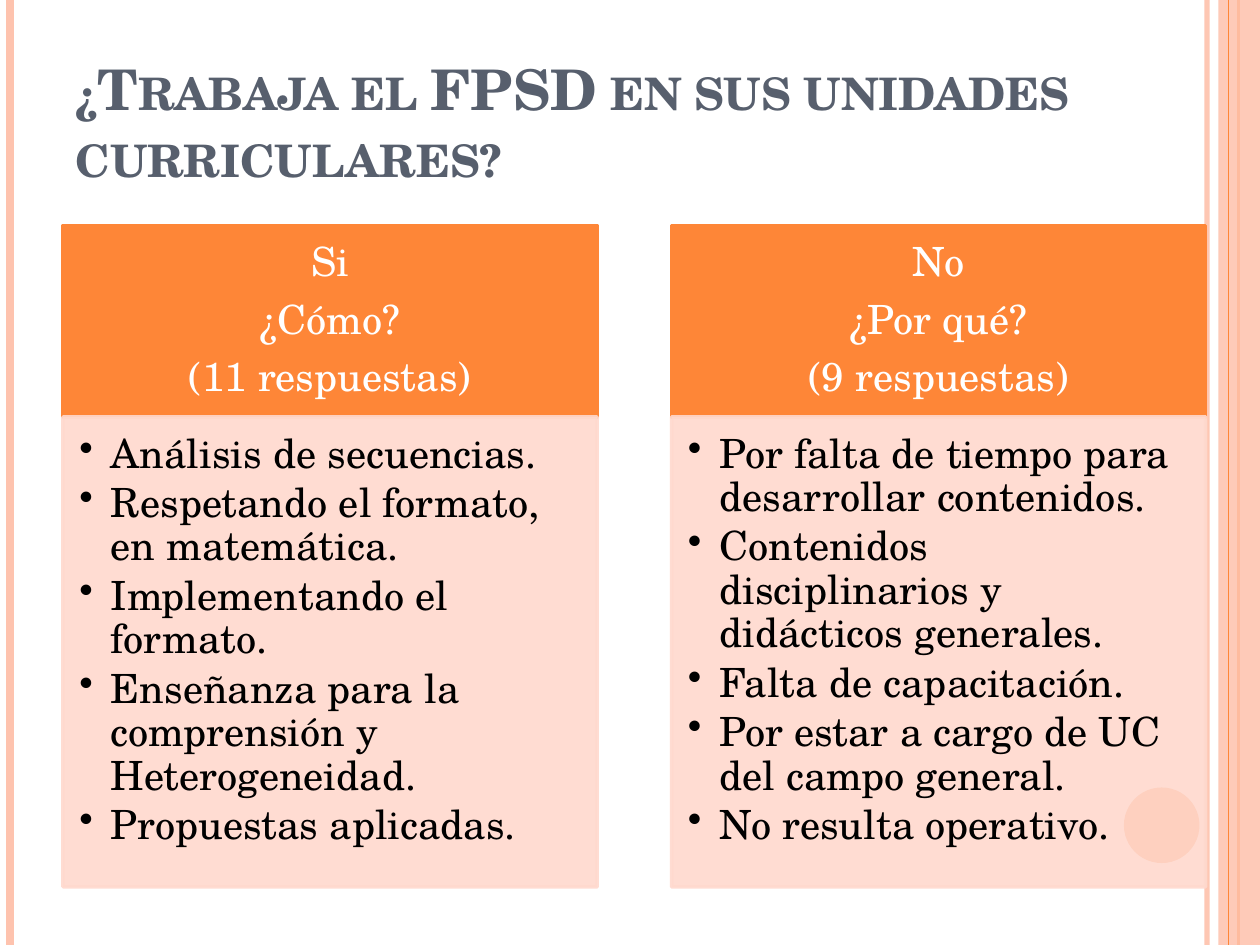
from dataclasses import dataclass

from lxml import etree
from pptx import Presentation
from pptx import util as u
from pptx.dml.color import RGBColor
from pptx.enum import shapes, text
from pptx.oxml.ns import qn


@dataclass(frozen=True)
class Theme:
    """Hold the colours, font and type sizes."""
    orange: str = "FE8637"
    peach: str = "FEC3AE"
    pale: str = "FFD9CE"
    slate: str = "575F6D"
    white: str = "FFFFFF"
    black: str = "000000"
    font: str = "TeX Gyre Schola"
    head: int = 32
    body: int = 23


THEME = Theme()
TITLE = "¿Trabaja el FPSD en sus unidades curriculares?"
COLUMNS = [
    (["Si", "¿Cómo?", "(11 respuestas)"],
     ["Análisis de secuencias.",
      "Respetando el formato, en matemática.",
      "Implementando el formato.",
      "Enseñanza para la comprensión y Heterogeneidad.",
      "Propuestas aplicadas."]),
    (["No", "¿Por qué?", "(9 respuestas)"],
     ["Por falta de tiempo para desarrollar contenidos.",
      "Contenidos disciplinarios y didácticos generales.",
      "Falta de capacitación.",
      "Por estar a cargo de UC del campo general.",
      "No resulta operativo."]),
]


def assign(item, values):
    """Set each attribute of an item from a dict."""
    for name, value in values.items():
        setattr(item, name, value)


def fade(fill, alpha):
    """Give a solid fill an opacity in percent."""
    tint = fill._xPr.find(qn("a:solidFill"))[0]
    etree.SubElement(tint, qn("a:alpha"), val=str(alpha * 1000))


def block(slide, kind, box, color, alpha=100, edge=0):
    """Draw a filled shape, with an edge of its own colour if asked."""
    item = slide.shapes.add_shape(kind, *map(u.Inches, box))
    item.shadow.inherit = False
    fills = [item.fill]
    if edge:
        item.line.width = u.Pt(edge)
        fills.append(item.line.fill)
    else:
        item.line.fill.background()
    for fill in fills:
        fill.solid()
        fill.fore_color.rgb = RGBColor.from_string(color)
        if alpha < 100:
            fade(fill, alpha)
    return item


def rule(slide, left, top, height, color, width, alpha=100):
    """Draw a vertical line."""
    item = slide.shapes.add_connector(
        shapes.MSO_CONNECTOR.STRAIGHT, u.Inches(left), u.Inches(top),
        u.Inches(left), u.Inches(top + height))
    item.line.width = u.Pt(width)
    item.line.color.rgb = RGBColor.from_string(color)
    if alpha < 100:
        fade(item.line.fill, alpha)
    etree.SubElement(item._element.spPr, qn("a:effectLst"))


def write(item, lines, color, size, insets, anchor, style, bold=False):
    """Fill a shape with styled paragraphs."""
    frame = item.text_frame
    sides = ("margin_left", "margin_top", "margin_right", "margin_bottom")
    assign(frame, dict(zip(sides, map(u.Inches, insets))))
    assign(frame, {"word_wrap": True, "vertical_anchor": anchor})
    for pos, line in enumerate(lines):
        para = frame.add_paragraph() if pos else frame.paragraphs[0]
        assign(para, style)
        run = para.add_run()
        run.text = line
        assign(run.font, {"name": THEME.font, "size": u.Pt(size), "bold": bold})
        run.font.color.rgb = RGBColor.from_string(color)
    return frame.paragraphs


def frame_page(slide, box):
    """Draw the edge rules, the side band and the disc."""
    left, top, wide, high = box
    right = left + wide
    rule(slide, right - 0.42, top, high, THEME.peach, 3, 93)
    rule(slide, left + 0.08, top, high, THEME.peach, 4.5)
    rule(slide, right - 0.17, top, high, THEME.orange, 1.5)
    block(slide, shapes.MSO_SHAPE.RECTANGLE,
          (right - 0.33, top, 0.33, high), THEME.peach, 87)
    rule(slide, right - 0.25, top, high, THEME.orange, 0.75)
    block(slide, shapes.MSO_SHAPE.OVAL,
          (right - 1.08, top + high - 1.25, 0.6, 0.6), THEME.orange)


def title(slide, box):
    """Place the heading in small capitals."""
    item = slide.shapes.add_textbox(*map(u.Inches, box))
    paras = write(item, [TITLE], THEME.slate, THEME.head,
                  (0.1, 0.05, 0.1, 0.05), text.MSO_ANCHOR.BOTTOM,
                  {"alignment": text.PP_ALIGN.LEFT}, True)
    paras[0].runs[0]._r.get_or_add_rPr().set("cap", "small")


def column(slide, box, heads, points):
    """Stack a header block on a panel of bullets."""
    left, top, wide, high = box
    cap = 1.52
    kind = shapes.MSO_SHAPE.RECTANGLE
    header = block(slide, kind, (left, top, wide, cap), THEME.orange, edge=2)
    write(header, heads, THEME.white, THEME.body, (0.18, 0.1, 0.18, 0.1),
          text.MSO_ANCHOR.MIDDLE,
          {"alignment": text.PP_ALIGN.CENTER, "line_spacing": 0.9,
           "space_after": u.Pt(8)})
    panel = block(slide, kind, (left, top + cap, wide, high - cap),
                  THEME.pale, 90, 2)
    paras = write(panel, points, THEME.black, THEME.body,
                  (0.13, 0.13, 0.18, 0.2), text.MSO_ANCHOR.TOP,
                  {"alignment": text.PP_ALIGN.LEFT, "line_spacing": 0.9,
                   "space_after": u.Pt(3.4), "level": 1})
    for para in paras:
        props = para._p.get_or_add_pPr()
        props.set("marL", str(u.Inches(0.25)))
        props.set("indent", str(u.Inches(-0.25)))
        etree.SubElement(props, qn("a:buChar"), char="•")


def columns(slide, box, gap):
    """Set the columns side by side with an equal gap."""
    left, top, wide, high = box
    width = (wide - gap * (len(COLUMNS) - 1)) / len(COLUMNS)
    for pos, (heads, points) in enumerate(COLUMNS):
        start = left + pos * (width + gap)
        column(slide, (start, top, width, high), heads, points)


def main():
    """Build and save the slide."""
    deck = Presentation()
    assign(deck, {"slide_width": u.Inches(10), "slide_height": u.Inches(7.5)})
    slide = deck.slides.add_slide(deck.slide_layouts[6])
    frame_page(slide, (0, 0, 10, 7.5))
    title(slide, (0.5, 0.3, 8.17, 1.25))
    columns(slide, (0.5, 1.79, 9.07, 5.25), 0.59)
    deck.save("out.pptx")


if __name__ == "__main__":
    main()
